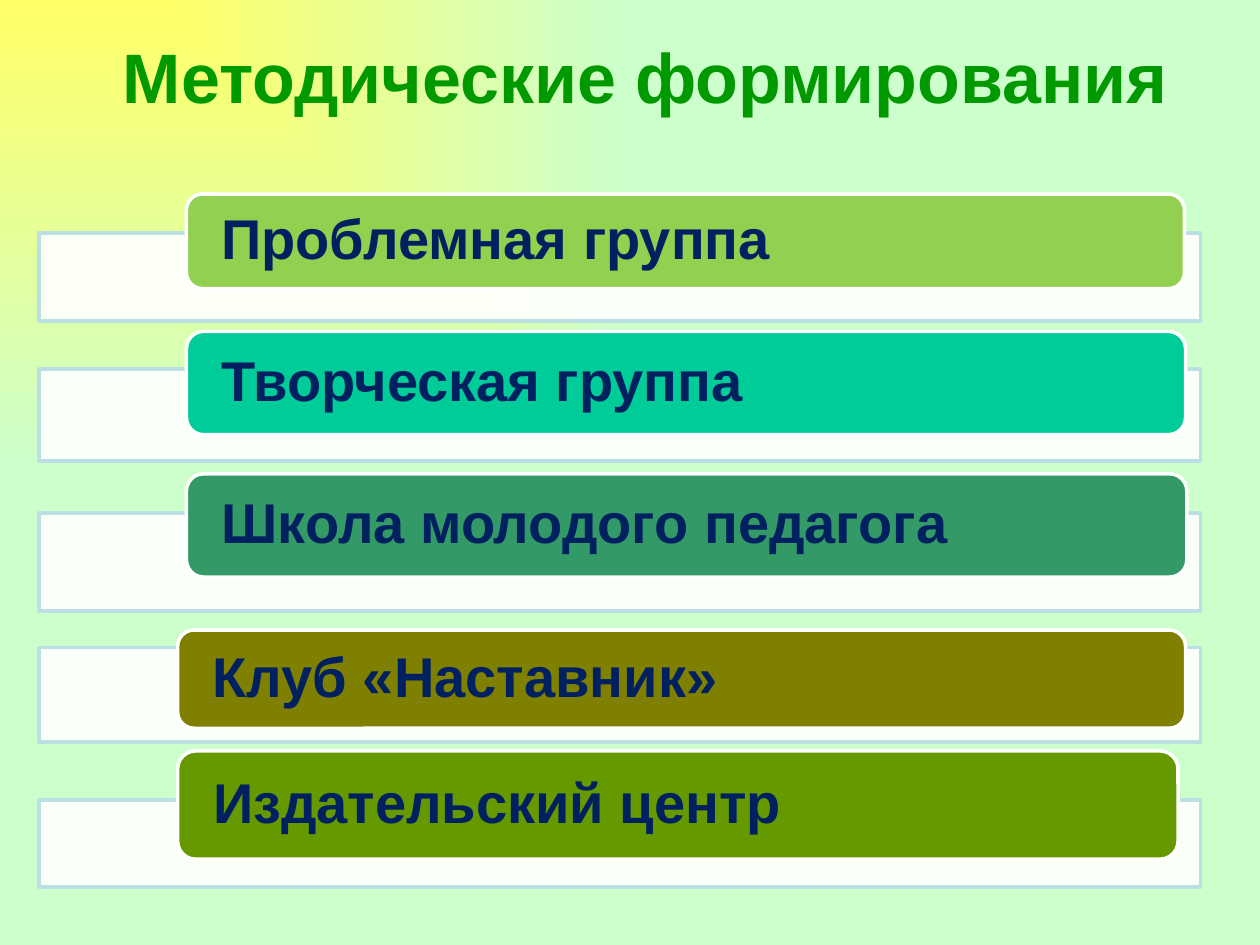
import pptx
import pptx.util
import pptx.dml.color
import pptx.enum.shapes
import pptx.enum.text
import pptx.oxml
import pptx.oxml.ns
from pptx.util import Inches

GROUPS = [
    # text, colour, card (left, top, width, height), band (top, height)
    ("Проблемная группа", "92D050", (1.48, 1.54, 7.92, 0.75), (1.85, 0.7)),
    ("Творческая группа", "00CC99", (1.48, 2.63, 7.93, 0.82), (2.93, 0.73)),
    ("Школа молодого педагога", "339966", (1.48, 3.76, 7.94, 0.82), (4.07, 0.78)),
    ("Клуб «Наставник»", "808000", (1.41, 5, 8, 0.78), (5.14, 0.75)),
    ("Издательский центр", "669900", (1.41, 5.96, 7.94, 0.86), (6.35, 0.69)),
]


def rgb(colour):
    """Return the colour of a hex string."""
    return pptx.dml.color.RGBColor.from_string(colour)


def set_font(paragraph, size, colour):
    """Format a paragraph in bold Arial."""
    font = paragraph.font
    font.name, font.size, font.bold = "Arial", pptx.util.Pt(size), True
    font.color.rgb = rgb(colour)


def paint_background(slide):
    """Spread a gradient from the top left corner."""
    fill = slide.background.fill
    fill.gradient()
    for stop, colour, position in zip(fill.gradient_stops, ("FFFF66", "CCFFCC"), (0, 1)):
        stop.color.rgb = rgb(colour)
        stop.position = position
    linear = slide.background._cSld.find(".//" + pptx.oxml.ns.qn("a:lin"))
    corner = pptx.oxml.parse_xml(
        f'<a:path {pptx.oxml.ns.nsdecls("a")} path="rect">'
        '<a:fillToRect r="100000" b="100000"/></a:path>')
    linear.getparent().replace(linear, corner)


def add_title(slide, text):
    """Place the slide heading."""
    title = slide.shapes.title
    title.left, title.top, title.width, title.height = map(Inches, (0.62, 0.2, 9, 0.8))
    title.text_frame.text = text
    title.text_frame.vertical_anchor = pptx.enum.text.MSO_ANCHOR.MIDDLE
    heading = title.text_frame.paragraphs[0]
    heading.alignment = pptx.enum.text.PP_ALIGN.CENTER
    set_font(heading, 40, "009900")


def add_box(slide, kind, bounds, fill, line):
    """Add a filled and outlined shape."""
    box = slide.shapes.add_shape(kind, *map(Inches, bounds))
    box.shadow.inherit = False
    box.fill.solid()
    box.fill.fore_color.rgb = rgb(fill)
    box.line.color.rgb = rgb(line)
    box.line.width = pptx.util.Pt(2)
    return box


def add_band(slide, top, height):
    """Add a translucent white band behind a card."""
    band = add_box(slide, pptx.enum.shapes.MSO_SHAPE.RECTANGLE,
                   (0.31, top, 9.22, height), "FFFFFF", "BBE0E3")
    white = band._element.spPr.find(
        pptx.oxml.ns.qn("a:solidFill") + "/" + pptx.oxml.ns.qn("a:srgbClr"))
    white.append(pptx.oxml.parse_xml(
        f'<a:alpha {pptx.oxml.ns.nsdecls("a")} val="90000"/>'))


def add_card(slide, text, colour, bounds):
    """Add a rounded card with the name of a group."""
    card = add_box(slide, pptx.enum.shapes.MSO_SHAPE.ROUNDED_RECTANGLE,
                   bounds, colour, "FFFFFF")
    frame = card.text_frame
    frame.word_wrap = True
    frame.margin_left = frame.margin_right = Inches(0.24)
    frame.margin_top = frame.margin_bottom = 0
    frame.vertical_anchor = pptx.enum.text.MSO_ANCHOR.MIDDLE
    frame.text = text
    name = frame.paragraphs[0]
    name.alignment = pptx.enum.text.PP_ALIGN.LEFT
    name.line_spacing = 0.9
    set_font(name, 32, "002060")


def main():
    """Build the slide and save it."""
    deck = pptx.Presentation()
    deck.slide_width, deck.slide_height = Inches(10), Inches(7.5)
    slide = deck.slides.add_slide(deck.slide_layouts[5])
    paint_background(slide)
    add_title(slide, "Методические формирования")
    for text, colour, card, band in GROUPS:
        add_band(slide, *band)
        add_card(slide, text, colour, card)
    deck.save("out.pptx")


if __name__ == "__main__":
    main()
